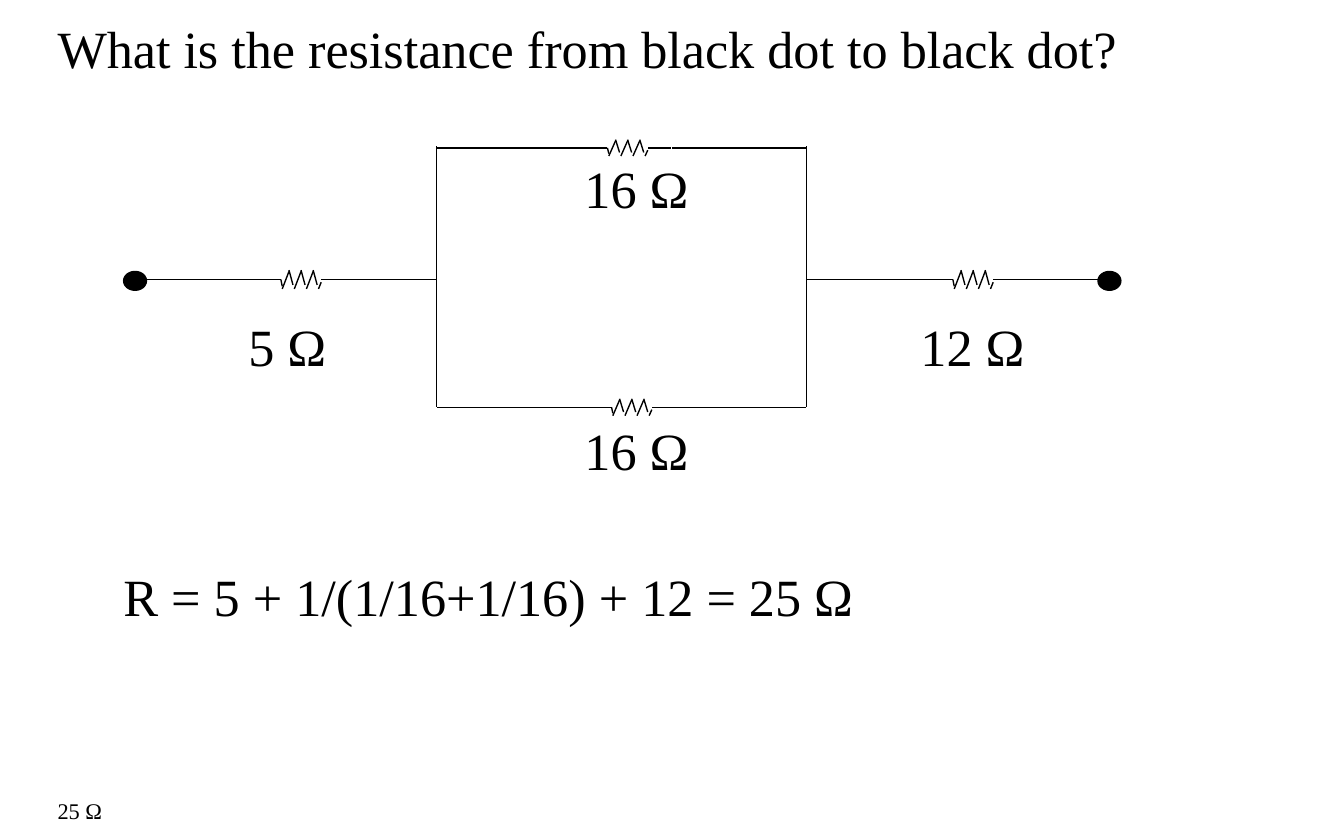
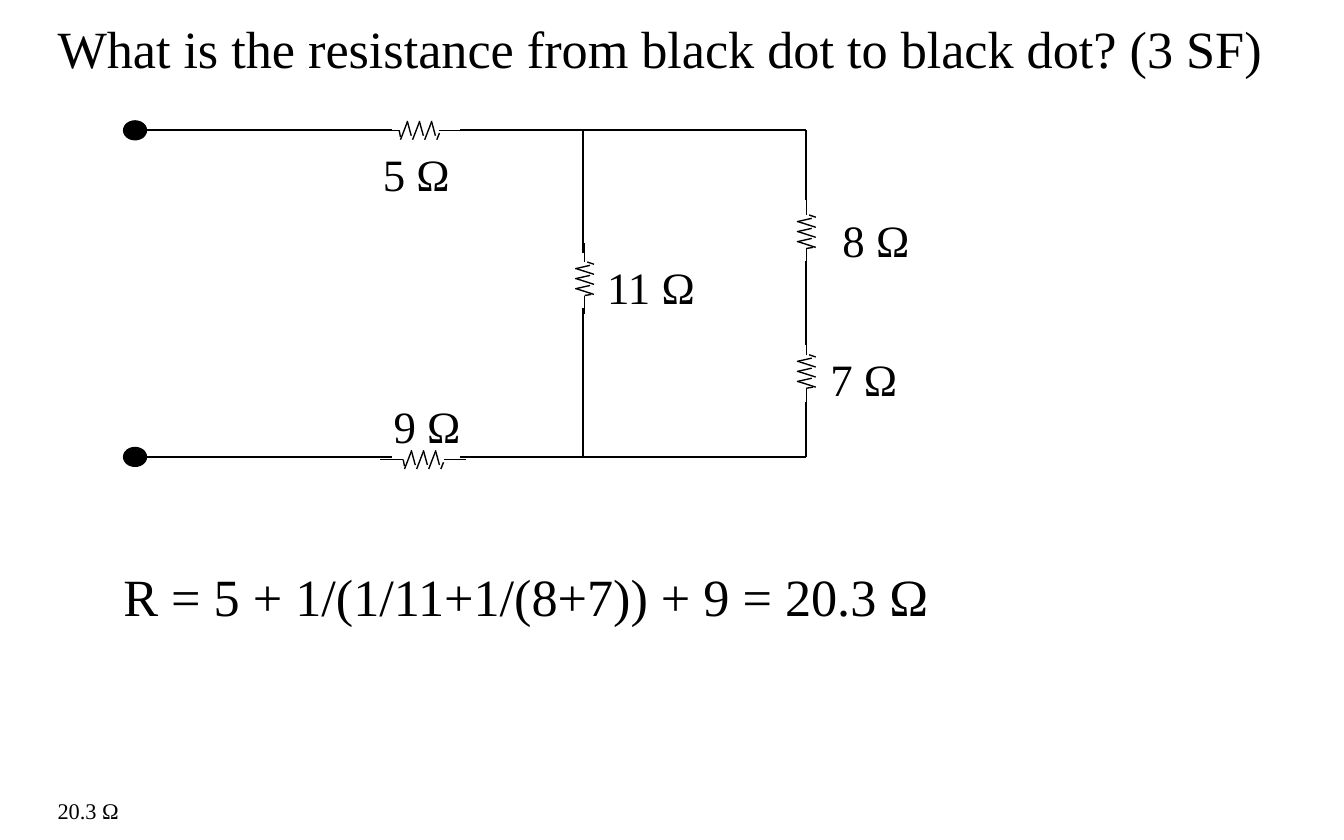
from pptx import Presentation
from pptx.dml.color import RGBColor
from pptx.enum.shapes import MSO_CONNECTOR, MSO_SHAPE
from pptx.enum.text import MSO_AUTO_SIZE
from pptx.oxml.ns import qn
from pptx.util import Inches, Pt
from lxml.etree import SubElement

BLACK = RGBColor(0x00, 0x00, 0x00)
FONT = "Times New Roman"
THIN = 0.75
ASK = "What is the resistance from black dot to black dot?"

# Strokes of a resistor: distance along the wire and offset across it
ZIGZAG = [
    (0.44, 0.04, 0.41, -0.07), (0.41, -0.06, 0.36, 0.07),
    (0.35, 0.04, 0.32, -0.07), (0.32, -0.06, 0.27, 0.07),
    (0.26, 0.04, 0.23, -0.07), (0.23, -0.06, 0.18, 0.07),
    (0.18, 0.05, 0.17, 0), (0.47, 0.02, 0.45, 0.07),
    (0.17, 0, 0, 0), (0.64, 0, 0.47, 0),
]
SHRINK = 0.83  # upright resistors are shorter

# Wires: x1, y1, x2, y2. Flat resistors: left, y, height scale.
# Upright resistors: x, bottom. Labels: text, left, top, width.
SLIDES = [
    dict(
        title=ASK,
        sum=("R = 5 + 1/(1/16+1/16) + 12 = 25 Ω", 5.7),
        answer=("25 Ω", 0.54),
        dots=[(0.92, 2.02), (8.17, 2.02)],
        weight=THIN,
        wires=[(6, 1.09, 6, 3.03), (3.25, 1.09, 3.25, 3.03),
               (5, 3.03, 6, 3.03), (5, 1.1, 6, 1.1),
               (4.42, 1.1, 3.25, 1.1), (4.42, 3.03, 3.25, 3.03),
               (1, 2.08, 2, 2.08), (2.5, 2.08, 3.25, 2.08),
               (6, 2.08, 7, 2.08), (7.5, 2.08, 8.25, 2.08)],
        flat=[(4.35, 1.1, 0.87), (4.38, 3.03, 0.9),
              (1.92, 2.08, 1), (6.92, 2.08, 1)],
        upright=[],
        size=28, high=0.57,
        labels=[("5 Ω", 1.75, 2.29, 0.8), ("12 Ω", 6.75, 2.29, 0.99),
                ("16 Ω", 4.25, 3.06, 0.99), ("16 Ω", 4.25, 1.11, 0.99)],
    ),
    dict(
        title=ASK + " (3 SF)",
        sum=("R = 5 + 1/(1/11+1/(8+7)) + 9 = 20.3 Ω", 6.27),
        answer=("20.3 Ω", 0.67),
        dots=[(0.92, 0.9), (0.92, 3.33)],
        weight=1,
        wires=[(1, 0.97, 2.92, 0.97), (1, 3.4, 2.92, 3.4),
               (4.34, 1.88, 4.34, 0.97), (4.34, 2.29, 4.34, 3.4),
               (3.42, 0.97, 6, 0.97), (3.42, 3.4, 6, 3.4),
               (6, 2.99, 6, 3.4), (6, 1.94, 6, 2.57), (6, 0.97, 6, 1.49)],
        flat=[(2.8, 0.97, 1), (2.83, 3.42, 1)],
        upright=[(4.35, 2.34), (6, 1.99), (6, 3.03)],
        size=24, high=0.5,
        labels=[("8 Ω", 6.17, 1.53, 0.71), ("7 Ω", 6.08, 2.57, 0.71),
                ("11 Ω", 4.42, 1.88, 0.87), ("5 Ω", 2.75, 1.04, 0.71),
                ("9 Ω", 2.83, 2.92, 0.71)],
    ),
]


def write(slide, text, left, top, width, high=0.57, size=28, wrap=False):
    box = slide.shapes.add_textbox(
        Inches(left), Inches(top), Inches(width), Inches(high))
    frame = box.text_frame
    frame.word_wrap = wrap
    frame.auto_size = MSO_AUTO_SIZE.SHAPE_TO_FIT_TEXT
    run = frame.paragraphs[0].add_run()
    run.text = text
    run.font.name = FONT
    run.font.size = Pt(size)
    run.font.color.rgb = BLACK


def wire(shapes, x1, y1, x2, y2, weight=THIN):
    line = shapes.add_connector(
        MSO_CONNECTOR.STRAIGHT, Inches(x1), Inches(y1), Inches(x2), Inches(y2))
    line.line.color.rgb = BLACK
    line.line.width = Pt(weight)
    SubElement(line._element.spPr, qn("a:effectLst"))


deck = Presentation()
deck.slide_width = Inches(10)
deck.slide_height = Inches(6.25)

for data in SLIDES:
    slide = deck.slides.add_slide(deck.slide_layouts[6])
    write(slide, data["title"], 0.33, 0.07, 9.33, wrap=True)
    text, width = data["answer"]
    write(slide, text, 0.33, 5.88, width, high=0.3, size=12)
    text, width = data["sum"]
    write(slide, text, 0.82, 4.15, width)

    for left, top in data["dots"]:
        dot = slide.shapes.add_shape(
            MSO_SHAPE.OVAL, Inches(left), Inches(top), Inches(0.17), Inches(0.14))
        dot.shadow.inherit = False
        dot.fill.solid()
        dot.fill.fore_color.rgb = BLACK
        dot.line.color.rgb = BLACK
        dot.line.width = Pt(THIN)

    for ends in data["wires"]:
        wire(slide.shapes, *ends, weight=data["weight"])

    for left, y, scale in data["flat"]:
        group = slide.shapes.add_group_shape()
        for a1, c1, a2, c2 in ZIGZAG:
            wire(group.shapes, left + a1, y + c1 * scale,
                 left + a2, y + c2 * scale)

    for x, base in data["upright"]:
        group = slide.shapes.add_group_shape()
        for a1, c1, a2, c2 in ZIGZAG:
            wire(group.shapes, x + c1, base - a1 * SHRINK,
                 x + c2, base - a2 * SHRINK)

    for text, left, top, width in data["labels"]:
        write(slide, text, left, top, width, high=data["high"], size=data["size"])

deck.save("out.pptx")
